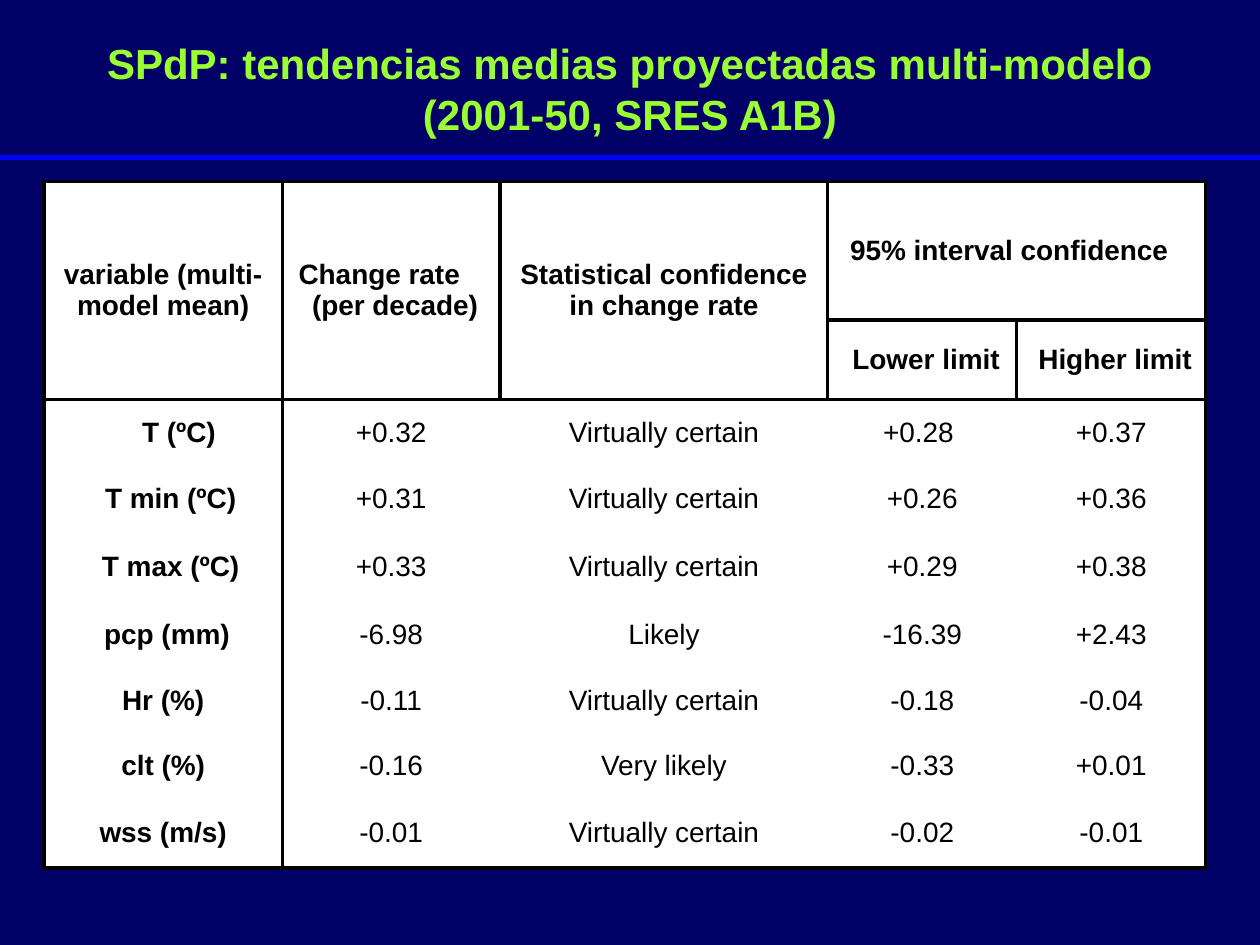
"""Slide with the projected multi-model mean trends and their confidence."""
import pptx
import pptx.dml.color
import pptx.enum.shapes
import pptx.enum.text
import pptx.oxml
import pptx.oxml.ns
import pptx.util
from lxml import etree

inches = pptx.util.Inches
alignments = pptx.enum.text.PP_ALIGN


def color(value):
    return pptx.dml.color.RGBColor.from_string(value)


def style_paragraph(paragraph, size, value, bold):
    paragraph.alignment = alignments.CENTER
    for run in paragraph.runs:
        run.font.name = "Arial"
        run.font.size = pptx.util.Pt(size)
        run.font.bold = bold
        run.font.color.rgb = color(value)


presentation = pptx.Presentation()
presentation.slide_width = inches(10)
presentation.slide_height = inches(7.5)
slide = presentation.slides.add_slide(presentation.slide_layouts[6])
slide.background.fill.solid()
slide.background.fill.fore_color.rgb = color("000066")

columns = [1.89, 1.73, 2.6, 1.5, 1.5]
rows = [1.1, 0.63, 0.53, 0.52, 0.56, 0.52, 0.52, 0.52, 0.55]
content = [
    ["variable (multi-model mean)", "Change rate\n (per decade)",
     "Statistical confidence in change rate", "95% interval confidence", ""],
    ["", "", "", " Lower limit", " Higher limit"],
    ["T (ºC)", "+0.32", "Virtually certain", "+0.28 ", "+0.37"],
    ["T min (ºC)", "+0.31", "Virtually certain", "+0.26", "+0.36"],
    ["T max (ºC)", "+0.33", "Virtually certain", "+0.29", "+0.38"],
    [" pcp (mm)", "-6.98", "Likely", "-16.39", "+2.43"],
    ["Hr (%)", "-0.11", "Virtually certain", "-0.18", "-0.04"],
    ["clt (%)", "-0.16", "Very likely", "-0.33", "+0.01"],
    ["wss (m/s)", "-0.01", "Virtually certain", "-0.02", "-0.01"],
]
indents = {
    "Change rate": ("marL", 0.03),
    "95% interval confidence": ("marR", 0.12),
    "T (ºC)": ("marL", 0.25),
    "T min (ºC)": ("marL", 0.12),
    "T max (ºC)": ("marL", 0.12),
}

frame = slide.shapes.add_table(len(rows), len(columns), inches(0.35), inches(1.44),
                               inches(sum(columns)), inches(sum(rows)))
table = frame.table
table.first_row = table.horz_banding = False
style = table._tbl.tblPr.find(pptx.oxml.ns.qn("a:tableStyleId"))
style.text = "{2D5ABB26-0587-4C30-8999-92F81FD0307C}"
for index, width in enumerate(columns):
    table.columns[index].width = inches(width)
for index, height in enumerate(rows):
    table.rows[index].height = inches(height)

black_line = '<a:solidFill><a:srgbClr val="000000"/></a:solidFill>'
for row, texts in enumerate(content):
    for column, text in enumerate(texts):
        cell = table.cell(row, column)
        header = row < 2
        edges = {
            "lnL": header or column < 2,
            "lnR": header or column in (0, len(columns) - 1),
            "lnT": row < 3,
            "lnB": header or row == len(rows) - 1,
        }
        properties = cell._tc.get_or_add_tcPr()
        for edge, drawn in edges.items():
            properties.append(pptx.oxml.parse_xml(
                f'<a:{edge} {pptx.oxml.ns.nsdecls("a")} w="28575">'
                f'{black_line if drawn else "<a:noFill/>"}</a:{edge}>'))
        cell.fill.solid()
        cell.fill.fore_color.rgb = color("FFFFFF")
        cell.vertical_anchor = pptx.enum.text.MSO_ANCHOR.MIDDLE
        cell.text_frame.text = text
        for paragraph in cell.text_frame.paragraphs:
            style_paragraph(paragraph, 16, "000000", header or column == 0)
            if paragraph.text in indents:
                side, indent = indents[paragraph.text]
                paragraph._p.get_or_add_pPr().set(side, str(inches(indent)))

table.cell(0, 1).text_frame.paragraphs[0].alignment = alignments.LEFT
for column in range(3):
    table.cell(0, column).merge(table.cell(1, column))
table.cell(0, 3).merge(table.cell(0, 4))

title = slide.shapes.add_textbox(0, inches(0.25), presentation.slide_width, inches(0.91))
title.text_frame.word_wrap = True
title.text_frame.text = "SPdP: tendencias medias proyectadas multi-modelo\v(2001-50, SRES A1B)"
style_paragraph(title.text_frame.paragraphs[0], 24, "99FF33", True)

rule = slide.shapes.add_connector(pptx.enum.shapes.MSO_CONNECTOR.STRAIGHT, 0, inches(1.25),
                                  presentation.slide_width, inches(1.25))
rule.line.color.rgb = color("0000FF")
rule.line.width = pptx.util.Pt(3)
etree.SubElement(rule._element.spPr, pptx.oxml.ns.qn("a:effectLst"))

presentation.save("out.pptx")
